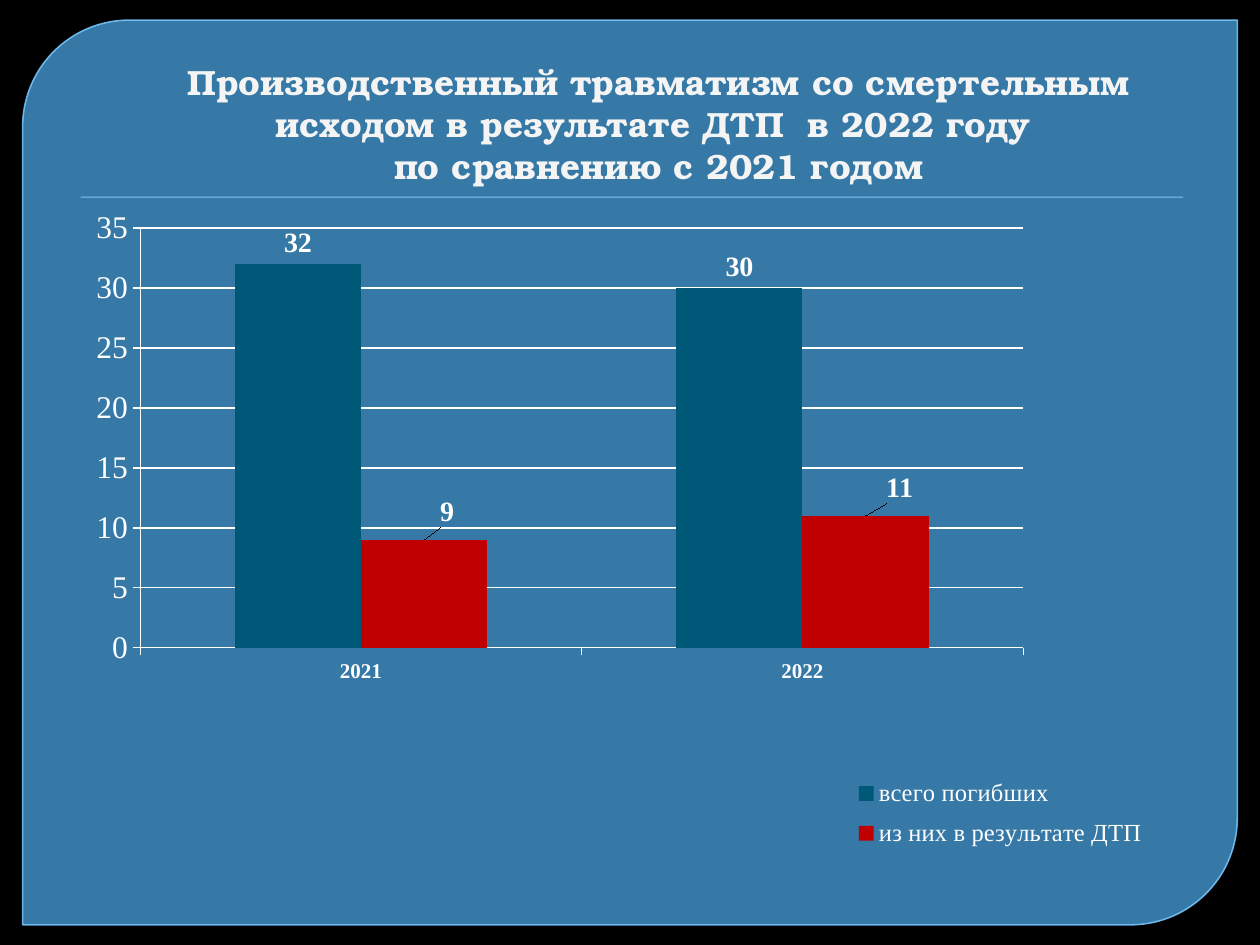
from dataclasses import dataclass

import lxml.etree
import pptx
import pptx.chart.data
import pptx.dml.color
import pptx.enum.chart
import pptx.enum.shapes
import pptx.enum.text
import pptx.oxml.ns
import pptx.util
from pptx.util import Inches

COLORS = {
    "backdrop": "000000",
    "panel": "53BBFF",
    "panel_edge": "78C7FF",
    "rule": "84C1FF",
    "title": "F4F4F4",
    "text": "FFFFFF",
    "total": "005878",
    "road": "C00000",
}
TITLE_FONT = "TeX Gyre Bonum"
CHART_FONT = "Times New Roman"
TITLE = (
    "Производственный травматизм со смертельным исходом "
    "в результате ДТП  в 2022 году \vпо сравнению с 2021 годом"
)
YEARS = ("2021", "2022")


@dataclass(frozen=True)
class Series:
    name: str
    values: tuple[int, ...]
    color: str
    label_shifts: tuple[tuple[float, float], ...] = ()


SERIES = (
    Series("всего погибших", (32, 30), "total"),
    Series("из них в результате ДТП", (9, 11), "road", ((0.02, -0.01), (0.03, -0.01))),
)


def rgb(name: str) -> pptx.dml.color.RGBColor:
    return pptx.dml.color.RGBColor.from_string(COLORS[name])


def set_font(font, size: float, bold: bool = False, color: str = "text", name: str = CHART_FONT) -> None:
    font.name = name
    font.size = pptx.util.Pt(size)
    font.bold = bold
    font.color.rgb = rgb(color)


def set_alpha(fill, percent: int) -> None:
    """Make a solid fill (or a line's fill) partly transparent."""
    color = fill._xPr.find(".//" + pptx.oxml.ns.qn("a:srgbClr"))
    lxml.etree.SubElement(color, pptx.oxml.ns.qn("a:alpha"), val=str(percent * 1000))


def set_layout(parent, index: int, **settings: object) -> None:
    """Give a chart part a manual layout, as its child number index."""
    qn = pptx.oxml.ns.qn
    for old in parent.findall(qn("c:layout")):
        parent.remove(old)
    layout = parent.makeelement(qn("c:layout"))
    manual = lxml.etree.SubElement(layout, qn("c:manualLayout"))
    for key, value in settings.items():
        lxml.etree.SubElement(manual, qn(f"c:{key}"), val=str(value))
    parent.insert(index, layout)


def add_filled(page, kind, left: float, top: float, width: float, height: float, color: str):
    box = page.shapes.add_shape(kind, Inches(left), Inches(top), Inches(width), Inches(height))
    box.shadow.inherit = False
    box.fill.solid()
    box.fill.fore_color.rgb = rgb(color)
    box.line.fill.background()
    return box


def add_panel(page) -> None:
    kinds = pptx.enum.shapes.MSO_SHAPE
    panel = add_filled(page, kinds.ROUND_2_DIAG_RECTANGLE, 0.18, 0.16, 9.64, 7.18, "panel")
    panel.adjustments[0] = 0.118
    panel.adjustments[1] = 0
    set_alpha(panel.fill, 65)
    panel.line.color.rgb = rgb("panel_edge")
    panel.line.width = pptx.util.Pt(0.87)
    set_alpha(panel.line.fill, 88)
    add_filled(page, kinds.RECTANGLE, 0.64, 1.56, 8.75, 0.01, "rule")


def fill_title(page) -> None:
    title = page.shapes.title
    title.element.getparent().append(title.element)  # in front of the panel
    title.left, title.top = Inches(1.3), Inches(0.36)
    title.width, title.height = Inches(7.8), Inches(1.17)
    frame = title.text_frame
    frame.text = TITLE
    frame.word_wrap = True
    frame.vertical_anchor = pptx.enum.text.MSO_ANCHOR.BOTTOM
    para = frame.paragraphs[0]
    para.alignment = pptx.enum.text.PP_ALIGN.CENTER
    para._p.get_or_add_pPr().set("marL", str(Inches(0.06)))
    set_font(para.font, 20, True, "title", TITLE_FONT)


def style_axis(axis, size: float, bold: bool) -> None:
    axis.major_tick_mark = pptx.enum.chart.XL_TICK_MARK.OUTSIDE
    axis.minor_tick_mark = pptx.enum.chart.XL_TICK_MARK.NONE
    axis.format.line.color.rgb = rgb("text")
    axis.format.line.width = pptx.util.Pt(0.75)
    set_font(axis.tick_labels.font, size, bold)


def style_series(bars, series: Series) -> None:
    bars.format.fill.solid()
    bars.format.fill.fore_color.rgb = rgb(series.color)
    outside = pptx.enum.chart.XL_LABEL_POSITION.OUTSIDE_END
    labels = bars.data_labels
    labels.show_value = True
    labels.position = outside
    set_font(labels.font, 16, True)
    for index, (x, y) in enumerate(series.label_shifts):
        label = bars.points[index].data_label
        label.position = outside
        set_font(label.font, 16, True)
        set_layout(label._dLbl, 1, x=x, y=y)


def add_casualty_chart(page) -> None:
    data = pptx.chart.data.CategoryChartData()
    data.categories = YEARS
    for series in SERIES:
        data.add_series(series.name, series.values)
    chart = page.shapes.add_chart(
        pptx.enum.chart.XL_CHART_TYPE.COLUMN_CLUSTERED,
        Inches(0.35), Inches(1.62), Inches(9.09), Inches(5.59), data,
    ).chart
    set_font(chart.font, 18, name=TITLE_FONT)
    chart.has_title = False

    plot = chart.plots[0]
    plot.gap_width = 150
    plot.overlap = 0
    plot.vary_by_categories = False
    for bars, series in zip(plot.series, SERIES):
        style_series(bars, series)

    style_axis(chart.category_axis, 12, True)
    values = chart.value_axis
    style_axis(values, 18, False)
    values.minimum_scale, values.maximum_scale, values.major_unit = 0, 35, 5
    values.has_major_gridlines = True
    values.major_gridlines.format.line.color.rgb = rgb("text")
    values.major_gridlines.format.line.width = pptx.util.Pt(0.75)

    chart.has_legend = True
    legend = chart.legend
    legend.position = pptx.enum.chart.XL_LEGEND_POSITION.RIGHT
    legend.include_in_layout = False
    set_font(legend.font, 14)
    edges = {"xMode": "edge", "yMode": "edge"}
    set_layout(legend._element, 1, **edges, x=0.7, y=0.8, w=0.27, h=0.13)
    plot_area = chart._chartSpace.chart.plotArea
    set_layout(plot_area, 0, layoutTarget="inner", **edges, x=0.084, y=0.034, w=0.771, h=0.596)


def main() -> None:
    deck = pptx.Presentation()
    deck.slide_width, deck.slide_height = Inches(10), Inches(7.5)
    page = deck.slides.add_slide(deck.slide_layouts.get_by_name("Title Only"))
    page.background.fill.solid()
    page.background.fill.fore_color.rgb = rgb("backdrop")
    add_panel(page)
    fill_title(page)
    add_casualty_chart(page)
    deck.save("out.pptx")


if __name__ == "__main__":
    main()
